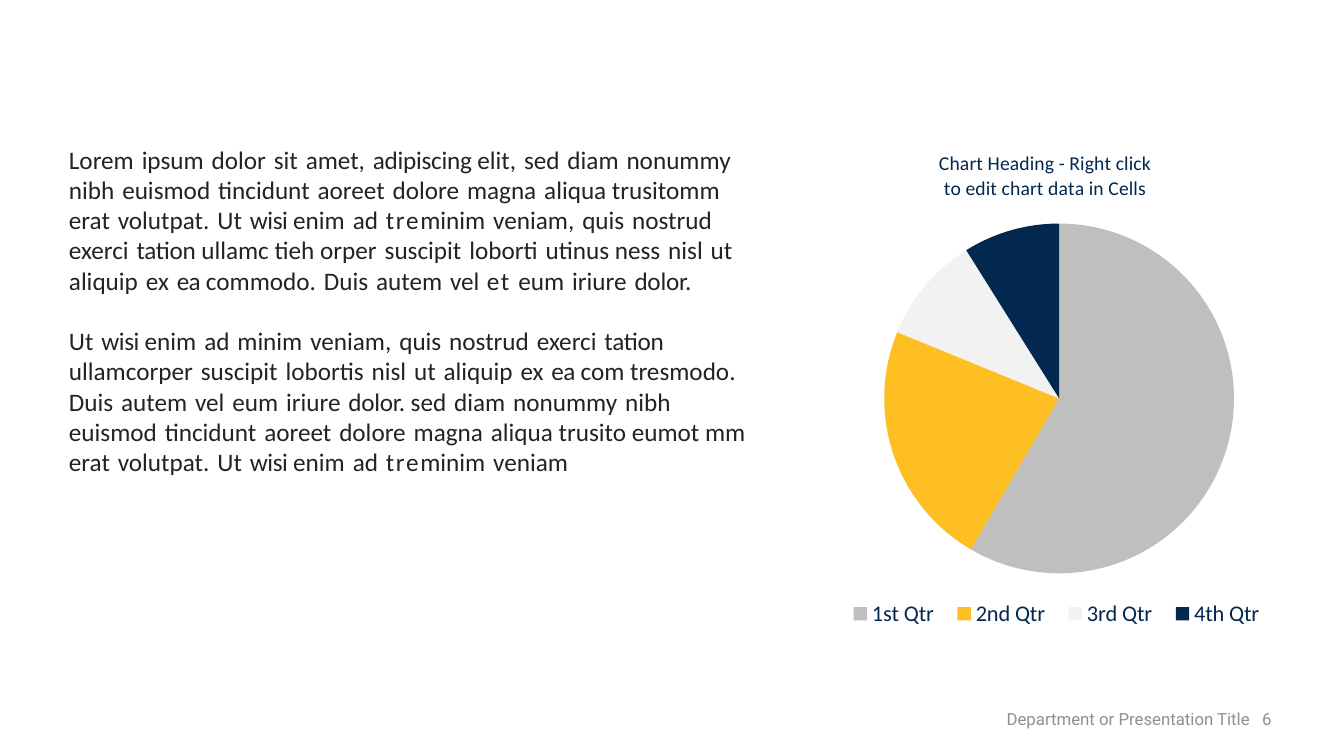
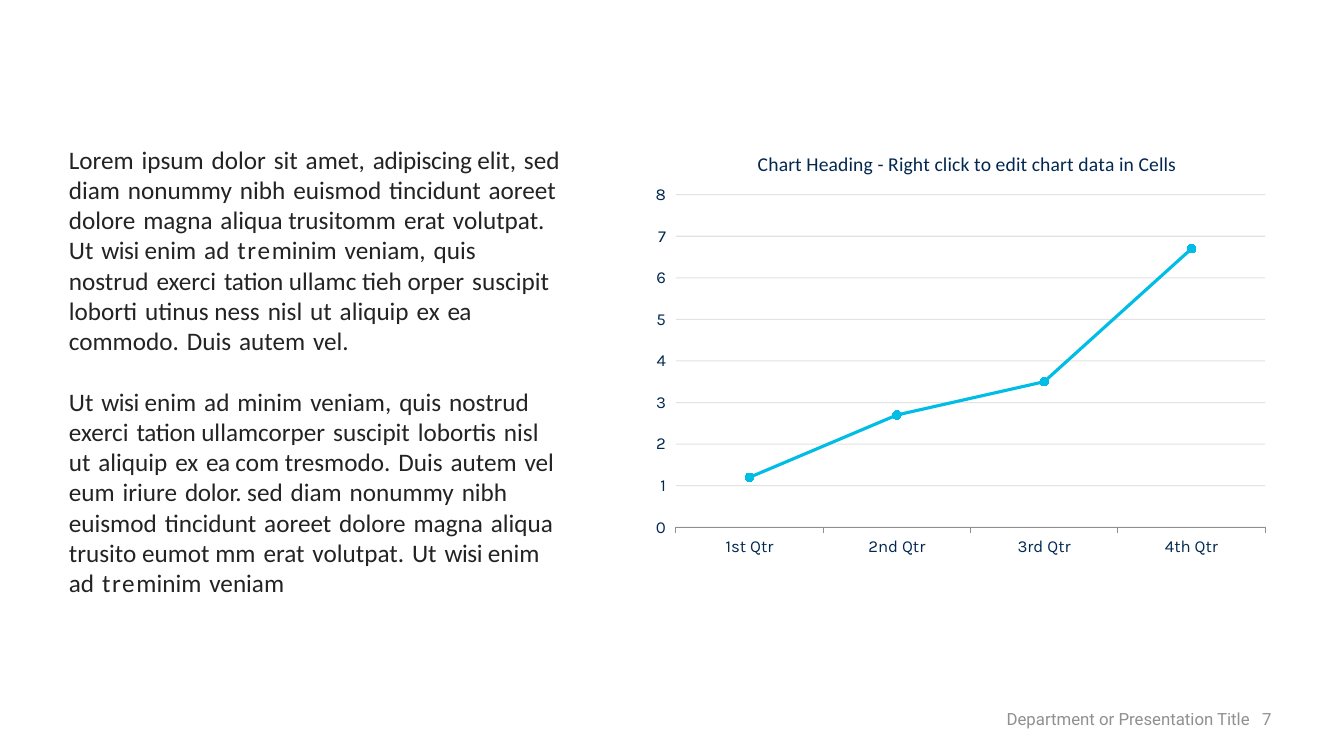
from lxml import etree
from pptx import Presentation
from pptx import util as u
from pptx.chart.data import CategoryChartData
from pptx.dml.color import RGBColor
from pptx.enum import chart as ch, text
from pptx.oxml.ns import qn

PX = 12700 * 72 / 100.8  # EMU per px

NAVY = RGBColor(0x02, 0x28, 0x50)
CYAN = RGBColor(0x00, 0xBD, 0xE6)
GOLD = RGBColor(0xFE, 0xBF, 0x23)
SILVER = RGBColor(0xBF, 0xBF, 0xBF)
PALE = RGBColor(0xF2, 0xF2, 0xF2)
GREY = RGBColor(0x90, 0x90, 0x90)
INK = RGBColor(0x23, 0x23, 0x23)

BODY_FONT, AXIS_FONT, FOOTER_FONT = "Calibri", "Karla", "Roboto"
QUARTERS = ["1st Qtr", "2nd Qtr", "3rd Qtr", "4th Qtr"]

# Body copy: (text, letter spacing in points). In pieces with no letter
# spacing the word gaps are widened, except those written as TIGHT.
WIDE_GAP = 1.5
TIGHT = "~"
OPENING = [
    ("Lorem ipsum dolor sit amet, ", 0), ("adipiscing ", -0.2),
    ("elit, sed diam nonummy nibh euismod tincidunt aoreet dolore magna "
     "aliqua~trusitomm erat volutpat. Ut ", 0),
    ("wisi ", -0.3), ("enim ad ", 0), ("tre", 1.2),
    ("minim veniam, quis nostrud exerci ", 0), ("tation ", -0.2),
    ("ullamc~tieh~orper suscipit loborti utinus~ness nisl ut aliquip ex ", 0),
    ("ea ", -0.4), ("commodo. Duis autem vel", 0),
]
LONG_END = [(" et ", 1.2), ("eum iriure ", 0), ("dolor.", -0.2)]
SHORT_END = [(".", 1.2)]
CLOSING = [
    ("Ut ", 0), ("wisi ", -0.3),
    ("enim ad minim veniam, quis nostrud exerci ", 0), ("tation ", -0.2),
    ("ullamcorper suscipit lobortis nisl ut aliquip ex ", 0), ("ea ", -0.4),
    ("com~tresmodo. Duis autem vel eum iriure ", 0), ("dolor. ", -0.2),
    ("sed diam nonummy nibh euismod tincidunt aoreet dolore magna "
     "aliqua~trusito~eumot~mm erat volutpat. Ut ", 0),
    ("wisi ", -0.3), ("enim ad ", 0), ("tre", 1.2), ("minim veniam", 0),
]


def emu(*lengths):
    return [u.Emu(round(n * PX)) for n in lengths]


def set_font(font, name, size, color):
    font.name, font.size, font.bold = name, u.Pt(size), False
    font.color.rgb = color


def add_text_frame(s, box):
    tf = s.shapes.add_textbox(*emu(*box)).text_frame
    tf.word_wrap = True
    return tf


def add_footer(s, number):
    tf = add_text_frame(s, (767, 701, 515, 33))
    tf.vertical_anchor = text.MSO_ANCHOR.BOTTOM
    p = tf.paragraphs[0]
    p.text = f"Department or Presentation Title   {number}"
    p.alignment = text.PP_ALIGN.RIGHT
    p.line_spacing = 0.9
    set_font(p.font, FOOTER_FONT, 12, GREY)


def add_run(p, words, spacing):
    r = p.add_run()
    r.text = words.replace(TIGHT, " ")
    if spacing:
        r._r.get_or_add_rPr().set("spc", str(round(spacing * 100)))


def add_piece(p, words, spacing):
    if spacing:
        add_run(p, words, spacing)
        return
    for i, word in enumerate(words.split(" ")):
        if i:
            add_run(p, " ", WIDE_GAP)
        if word:
            add_run(p, word, 0)


def add_body(s, box, paragraphs):
    tf = add_text_frame(s, box)
    for i, pieces in enumerate(paragraphs):
        p = tf.add_paragraph() if i else tf.paragraphs[0]
        if i:
            p.space_before = u.Pt(21.6)
        set_font(p.font, BODY_FONT, 18, INK)
        for words, spacing in pieces:
            add_piece(p, words, spacing)


def place(element, index, inner=False, **fractions):
    """Give a chart part a manual layout, in fractions of the chart."""
    for old in element.findall(qn("c:layout")):
        element.remove(old)
    layout = etree.Element(qn("c:layout"))
    manual = etree.SubElement(layout, qn("c:manualLayout"))
    settings = {"layoutTarget": "inner"} if inner else {}
    settings.update(xMode="edge", yMode="edge", **fractions)
    for tag, value in settings.items():
        etree.SubElement(manual, qn("c:" + tag)).set("val", str(value))
    element.insert(index, layout)


def add_chart(s, kind, box, series, values, heading, heading_at, plot):
    data = CategoryChartData()
    data.categories = QUARTERS
    data.add_series(series, values)
    chart = s.shapes.add_chart(kind, *emu(*box), data).chart
    set_font(chart.font, AXIS_FONT, 10, NAVY)
    chart.has_legend = False
    # Heading
    chart.has_title = True
    title = chart.chart_title
    title.text_frame.text = heading
    for p in title.text_frame.paragraphs:
        set_font(p.font, BODY_FONT, 14, NAVY)
    place(title._element, 1, x=heading_at[0], y=heading_at[1])
    # Plot area
    area = chart._chartSpace.find(qn("c:chart")).find(qn("c:plotArea"))
    place(area, 0, inner=True, **dict(zip("xywh", plot)))
    return chart


def add_pie(s, box):
    chart = add_chart(s, ch.XL_CHART_TYPE.PIE, box, "Series 1", (59, 23, 10, 9),
                      "Chart Heading - Right click\nto edit chart data in Cells",
                      (0.26, 0.097), (0.155, 0.212, 0.711, 0.673))
    points = chart.plots[0].series[0].points
    for i, color in enumerate((SILVER, GOLD, PALE, NAVY)):
        fill = points[i].format.fill
        fill.solid()
        fill.fore_color.rgb = color
    # Legend
    chart.has_legend = True
    legend = chart.legend
    legend.position = ch.XL_LEGEND_POSITION.BOTTOM
    legend.include_in_layout = False
    set_font(legend.font, BODY_FONT, 16, NAVY)
    place(legend._element, 1, x=0.06, y=0.9, w=0.89, h=0.07)


def add_line(s, box):
    chart = add_chart(s, ch.XL_CHART_TYPE.LINE_MARKERS_STACKED, box, "Numbers",
                      (1.2, 2.7, 3.5, 6.7),
                      "Chart Heading - Right click to edit chart data in Cells",
                      (0.23, 0.015), (0.119, 0.114, 0.836, 0.693))
    # Series
    line = chart.plots[0].series[0]
    line.smooth = False
    line.format.line.color.rgb = CYAN
    line.format.line.width = u.Pt(2.25)
    marker = line.marker
    marker.style, marker.size = ch.XL_MARKER_STYLE.CIRCLE, 6
    marker.format.fill.solid()
    marker.format.fill.fore_color.rgb = CYAN
    marker.format.line.color.rgb = CYAN
    # Axes
    cats, vals = chart.category_axis, chart.value_axis
    for axis in (cats, vals):
        axis.major_tick_mark = ch.XL_TICK_MARK.OUTSIDE
        set_font(axis.tick_labels.font, AXIS_FONT, 12, NAVY)
    vals.minimum_scale, vals.maximum_scale, vals.major_unit = 0, 8, 1
    vals.format.line.fill.background()
    vals.has_major_gridlines = True
    grid = vals.major_gridlines.format.line
    for rule in (cats.format.line, grid):
        rule.color.rgb = GREY
        rule.width = u.Pt(0.75)
    rgb = next(vals.major_gridlines._xAx.find(qn("c:majorGridlines"))
               .iter(qn("a:srgbClr")))
    etree.SubElement(rgb, qn("a:alpha")).set("val", "25000")


def add_slide(prs, number, draw_chart, chart_box, body_box, paragraphs):
    s = prs.slides.add_slide(prs.slide_layouts[6])
    add_footer(s, number)
    draw_chart(s, chart_box)
    add_body(s, body_box, paragraphs)


def main():
    prs = Presentation()
    prs.slide_width, prs.slide_height = emu(1344, 756)
    add_slide(prs, 6, add_pie, (808, 93, 492, 557), (59, 139, 710, 407),
              (OPENING + LONG_END, CLOSING))
    add_slide(prs, 7, add_line, (592, 140, 705, 480), (59, 139, 514, 468),
              (OPENING + SHORT_END, CLOSING))
    prs.save("out.pptx")


if __name__ == "__main__":
    main()
